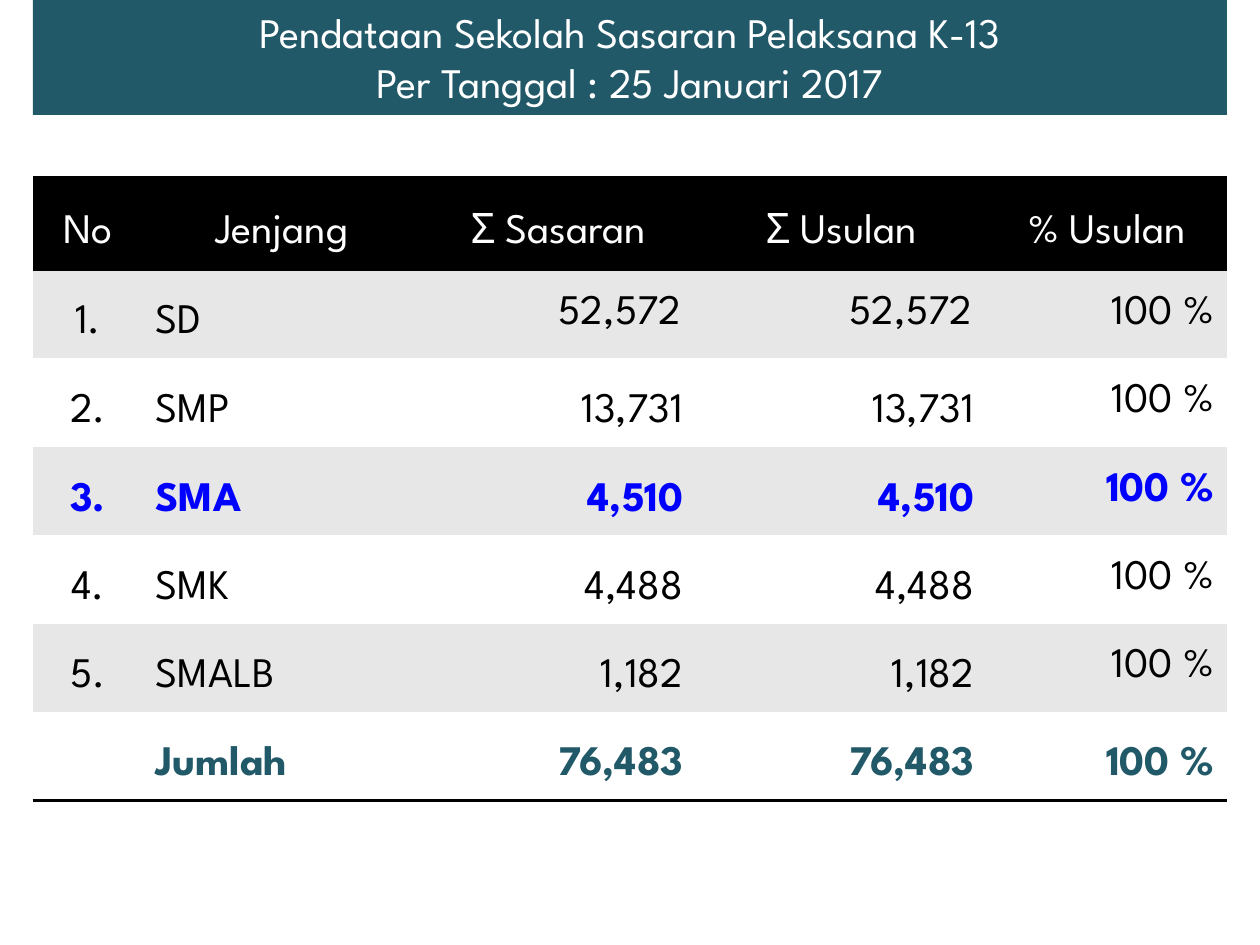
import dataclasses
import typing

import lxml.etree
import pptx
import pptx.dml.color
import pptx.enum.shapes
import pptx.enum.text
import pptx.oxml.ns
import pptx.util

RGBColor = pptx.dml.color.RGBColor
Align = pptx.enum.text.PP_ALIGN
Anchor = pptx.enum.text.MSO_ANCHOR

EMU_PER_PX = 914400 / 126
FONT_NAME = "League Spartan"
FONT_SIZE = pptx.util.Pt(24)
BORDER_WIDTH = pptx.util.Pt(2)

TEAL = RGBColor(0x21, 0x59, 0x68)
BLACK = RGBColor(0x00, 0x00, 0x00)
WHITE = RGBColor(0xFF, 0xFF, 0xFF)
GRAY = RGBColor(0xE7, 0xE7, 0xE7)
BLUE = RGBColor(0x00, 0x00, 0xFF)

LEFT, WIDTH = 33, 1194
TITLE_HEIGHT = 115
TABLE_TOP = 178
COLUMN_WIDTHS = [110, 278, 275, 291, 240]
ROW_HEIGHTS = [92, 86, 89, 88, 88, 88, 88]
HEADER_ALIGNMENTS = [Align.CENTER] * 5
BODY_ALIGNMENTS = [Align.CENTER, Align.LEFT, Align.RIGHT, Align.RIGHT, Align.RIGHT]
TITLE_LINES = ["Pendataan Sekolah Sasaran Pelaksana K-13", "Per Tanggal : 25 Januari 2017"]


@dataclasses.dataclass(frozen=True)
class TableRow:
    texts: tuple[str, ...]
    fill: RGBColor
    color: RGBColor = BLACK
    bold: bool = False
    alignments: typing.Sequence[Align] = tuple(BODY_ALIGNMENTS)
    single_spaced: tuple[int, ...] = (4,)
    wide_margins: tuple[int, ...] = ()
    borders: str = ""


ROWS = [
    TableRow(("No", "Jenjang", "Σ Sasaran", "Σ Usulan", "% Usulan"), BLACK, WHITE,
             alignments=HEADER_ALIGNMENTS, single_spaced=(), borders="TB"),
    TableRow(("1.", "SD", "52,572", "52,572", "100 %"), GRAY,
             single_spaced=(2, 3, 4), wide_margins=(2, 3), borders="T"),
    TableRow(("2.", "SMP", "13,731", "13,731", "100 %"), WHITE),
    TableRow(("3.", "SMA", "4,510", "4,510", "100 %"), GRAY, BLUE, True),
    TableRow(("4.", "SMK", "4,488", "4,488", "100 %"), WHITE),
    TableRow(("5.", "SMALB", "1,182", "1,182", "100 %"), GRAY),
    TableRow(("", "Jumlah", "76,483", "76,483", "100 %"), WHITE, TEAL, True,
             single_spaced=(), borders="B"),
]


def px(length: int) -> int:
    return round(length * EMU_PER_PX)


def apply(target: typing.Any, values: dict[str, typing.Any]) -> None:
    for name, value in values.items():
        setattr(target, name, value)


def write(paragraph: typing.Any, text: str, color: RGBColor, bold: bool,
          alignment: Align, spacing: float) -> None:
    apply(paragraph, {"alignment": alignment, "line_spacing": spacing})
    if text:
        run = paragraph.add_run()
        run.text = text
        apply(run.font, {"name": FONT_NAME, "size": FONT_SIZE, "bold": bold})
        run.font.color.rgb = color


def set_borders(cell: typing.Any, sides: str) -> None:
    properties = cell._tc.get_or_add_tcPr()
    qn = pptx.oxml.ns.qn
    for index, side in enumerate("LRTB"):
        line = lxml.etree.Element(qn(f"a:ln{side}"))
        if side in sides:
            line.set("w", str(BORDER_WIDTH))
            fill = lxml.etree.SubElement(line, qn("a:solidFill"))
            lxml.etree.SubElement(fill, qn("a:srgbClr")).set("val", str(BLACK))
        else:
            lxml.etree.SubElement(line, qn("a:noFill"))
        properties.insert(index, line)


def draw_title(slide: typing.Any) -> None:
    banner = slide.shapes.add_shape(pptx.enum.shapes.MSO_SHAPE.RECTANGLE,
                                    px(LEFT), 0, px(WIDTH), px(TITLE_HEIGHT))
    banner.shadow.inherit = False
    banner.fill.solid()
    banner.fill.fore_color.rgb = TEAL
    banner.line.fill.background()
    frame = banner.text_frame
    apply(frame, {"word_wrap": True, "vertical_anchor": Anchor.TOP,
                  "auto_size": pptx.enum.text.MSO_AUTO_SIZE.SHAPE_TO_FIT_TEXT})
    for index, text in enumerate(TITLE_LINES):
        paragraph = frame.add_paragraph() if index else frame.paragraphs[0]
        write(paragraph, text, WHITE, False, Align.CENTER, 1.0)


def draw_row(table: typing.Any, row_index: int, row: TableRow) -> None:
    for column, text in enumerate(row.texts):
        cell = table.cell(row_index, column)
        cell.vertical_anchor = Anchor.MIDDLE
        if column in row.wide_margins:
            apply(cell, {"margin_left": px(15), "margin_right": px(15)})
        cell.fill.solid()
        cell.fill.fore_color.rgb = row.fill
        set_borders(cell, row.borders)
        spacing = 1.0 if column in row.single_spaced else 1.5
        write(cell.text_frame.paragraphs[0], text, row.color, row.bold,
              row.alignments[column], spacing)


def draw_table(slide: typing.Any) -> None:
    table = slide.shapes.add_table(len(ROWS), len(COLUMN_WIDTHS), px(LEFT), px(TABLE_TOP),
                                   px(WIDTH), px(sum(ROW_HEIGHTS))).table
    apply(table, {"first_row": False, "horz_banding": False})
    for column, width in zip(table.columns, COLUMN_WIDTHS):
        column.width = px(width)
    for index, (row, height) in enumerate(zip(ROWS, ROW_HEIGHTS)):
        table.rows[index].height = px(height)
        draw_row(table, index, row)


def main() -> None:
    presentation = pptx.Presentation()
    apply(presentation, {"slide_width": px(1260), "slide_height": px(945)})
    slide = presentation.slides.add_slide(presentation.slide_layouts[6])
    draw_title(slide)
    draw_table(slide)
    presentation.save("out.pptx")


if __name__ == "__main__":
    main()
